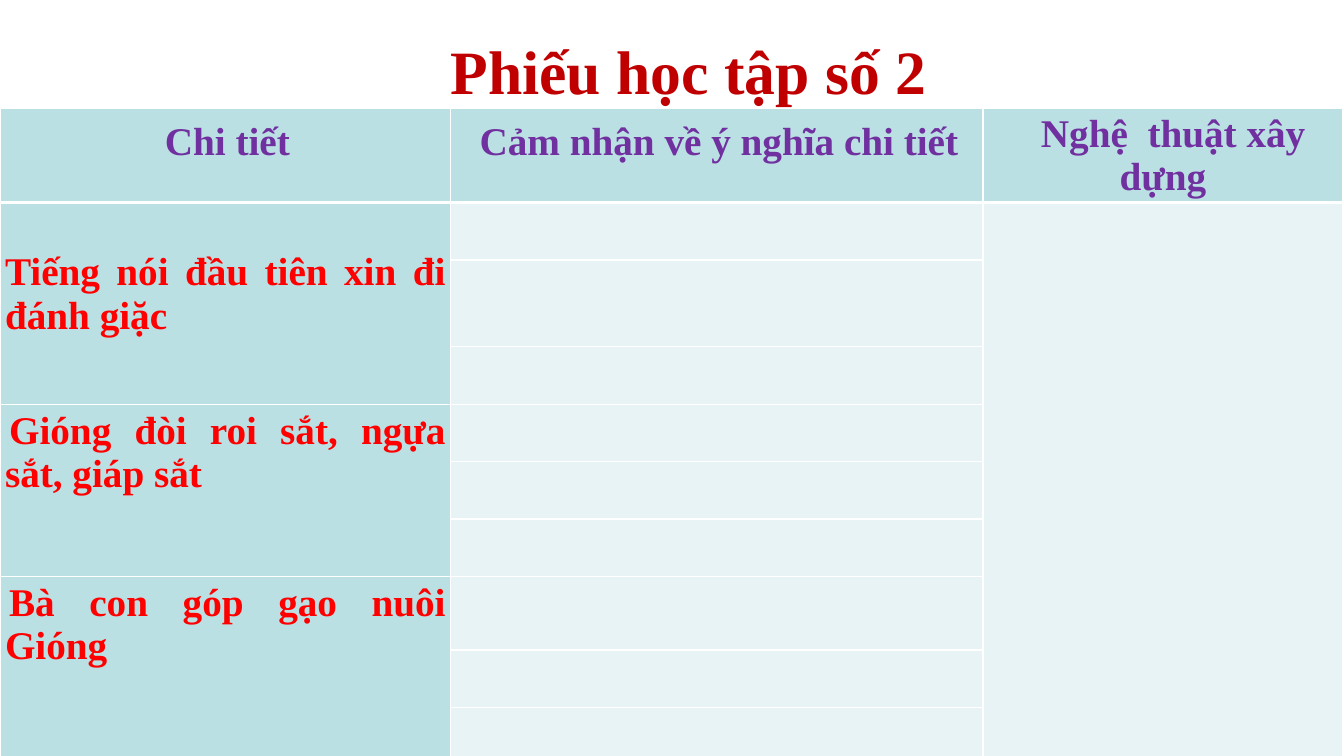
from lxml import etree
from pptx import Presentation
from pptx.dml.color import RGBColor
from pptx.enum.text import MSO_ANCHOR, PP_ALIGN
from pptx.oxml.ns import qn
from pptx.util import Inches, Pt

CENTER, JUSTIFY = PP_ALIGN.CENTER, PP_ALIGN.JUSTIFY
TOP, MIDDLE = MSO_ANCHOR.TOP, MSO_ANCHOR.MIDDLE

FONT = "Times New Roman"
WHITE, TEAL, PALE = "FFFFFF", "BBE0E3", "E7F3F4"
DARK_RED, PURPLE, RED = "C00000", "7030A0", "FF0000"

COLUMN_WIDTHS = [4.47, 5.28, 3.57]
ROW_HEIGHTS = [0.93, 0.57, 0.86, 0.57, 0.57, 0.57, 0.57, 0.73, 0.57, 0.63]
DETAIL_ROWS = 3
# Each detail: text, top margin, first-line indent
DETAILS = [
    ("Tiếng nói đầu tiên xin đi đánh giặc", 0.48, 0),
    ("Gióng đòi roi sắt, ngựa sắt, giáp sắt", 0.05, 0.04),
    ("Bà con góp gạo nuôi Gióng", 0.05, 0.04),
]


def rgb(value):
    return RGBColor.from_string(value)


def write(frame, text, size, color, align, indent=0):
    frame.word_wrap = True
    para = frame.paragraphs[0]
    para.text = text
    para.alignment = align
    if indent:
        para._p.get_or_add_pPr().set("indent", str(Inches(indent)))
    font = para.runs[0].font
    font.name, font.size, font.bold = FONT, Pt(size), True
    font.color.rgb = rgb(color)
    return para


def set_margins(cell, side, top):
    cell.margin_left = cell.margin_right = cell.margin_bottom = Inches(side)
    cell.margin_top = Inches(top)


def set_borders(cell, top, bottom):
    """Draw white borders; they must precede the fill in the cell's XML."""
    properties = cell._tc.get_or_add_tcPr()
    widths = {"a:lnL": 1, "a:lnR": 1, "a:lnT": top, "a:lnB": bottom}
    for position, (tag, width) in enumerate(widths.items()):
        line = etree.Element(qn(tag), w=str(Pt(width)))
        fill = etree.SubElement(line, qn("a:solidFill"))
        etree.SubElement(fill, qn("a:srgbClr"), val=WHITE)
        properties.insert(position, line)


def add_title(page, text):
    box = page.shapes.add_textbox(Inches(0.83), Inches(0.08), Inches(12), Inches(1.22))
    box.text_frame.vertical_anchor = MIDDLE
    write(box.text_frame, text, 44, DARK_RED, CENTER)


def add_grid(page):
    """Add the empty, coloured and bordered table."""
    table = page.shapes.add_table(
        len(ROW_HEIGHTS), len(COLUMN_WIDTHS), Inches(0), Inches(1.08),
        Inches(sum(COLUMN_WIDTHS)), Inches(sum(ROW_HEIGHTS))).table
    table.first_row = table.horz_banding = False
    for column, width in zip(table.columns, COLUMN_WIDTHS):
        column.width = Inches(width)
    for row_index, height in enumerate(ROW_HEIGHTS):
        table.rows[row_index].height = Inches(height)
        for column_index in range(len(COLUMN_WIDTHS)):
            cell = table.cell(row_index, column_index)
            cell.fill.solid()
            is_heading = row_index == 0 or column_index == 0
            cell.fill.fore_color.rgb = rgb(TEAL if is_heading else PALE)
            set_borders(cell, 3 if row_index == 1 else 1, 3 if row_index == 0 else 1)
    return table


def fill_headers(table):
    for column, text in enumerate(["Chi tiết", "Cảm nhận về ý nghĩa chi tiết"]):
        cell = table.cell(0, column)
        set_margins(cell, 0.05, 0.05)
        cell.vertical_anchor = TOP
        para = write(cell.text_frame, text, 28, PURPLE, CENTER, 0.04)
        para.line_spacing = 1.15
    cell = table.cell(0, 2)
    set_margins(cell, 0, 0)
    cell.vertical_anchor = MIDDLE
    write(cell.text_frame, "Nghệ  thuật xây dựng", 28, PURPLE, CENTER, 0.2)


def fill_details(table):
    for index, (text, top, indent) in enumerate(DETAILS):
        first = 1 + index * DETAIL_ROWS
        cell = table.cell(first, 0)
        cell.merge(table.cell(first + DETAIL_ROWS - 1, 0))
        set_margins(cell, 0.05, top)
        write(cell.text_frame, text, 28, RED, JUSTIFY, indent)
    table.cell(1, 2).merge(table.cell(len(ROW_HEIGHTS) - 1, 2))


def main():
    deck = Presentation()
    deck.slide_width, deck.slide_height = Inches(13.33), Inches(7.5)
    page = deck.slides.add_slide(deck.slide_layouts[6])
    table = add_grid(page)
    fill_headers(table)
    fill_details(table)
    add_title(page, "Phiếu học tập số 2")
    deck.save("out.pptx")


if __name__ == "__main__":
    main()
